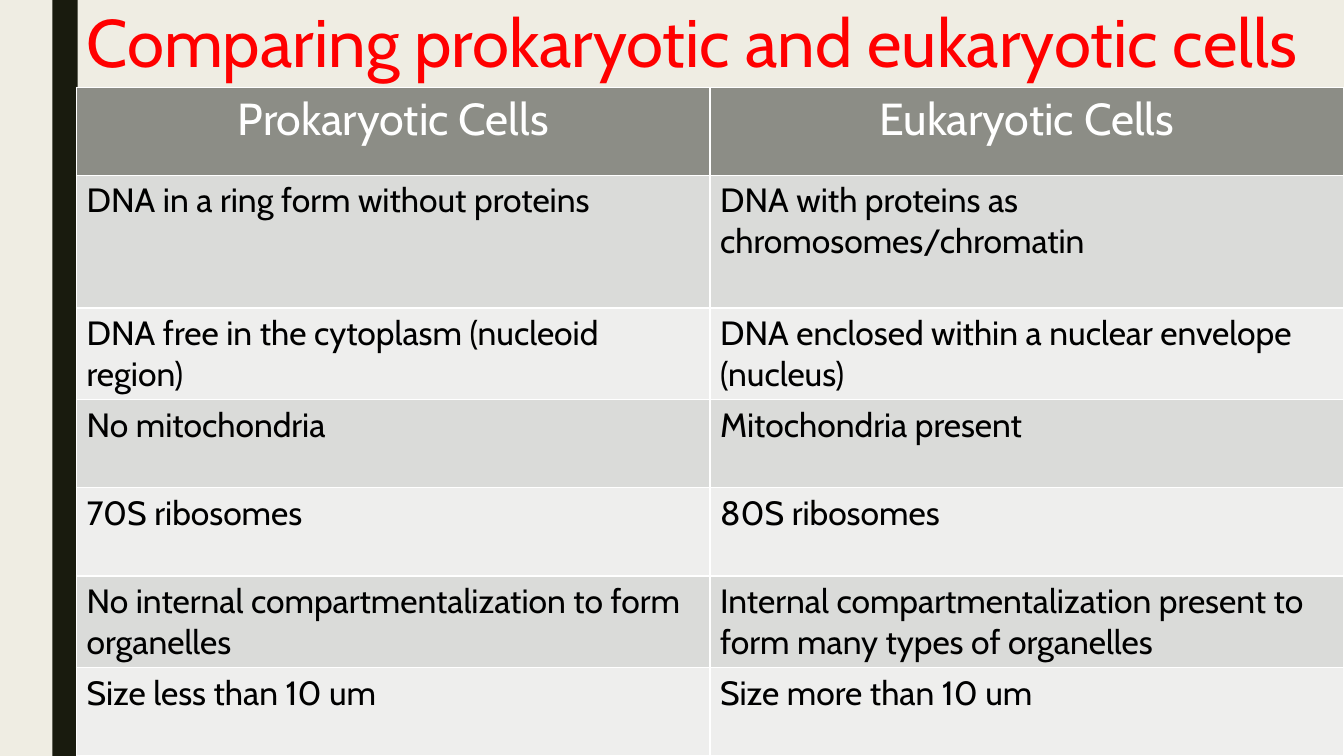
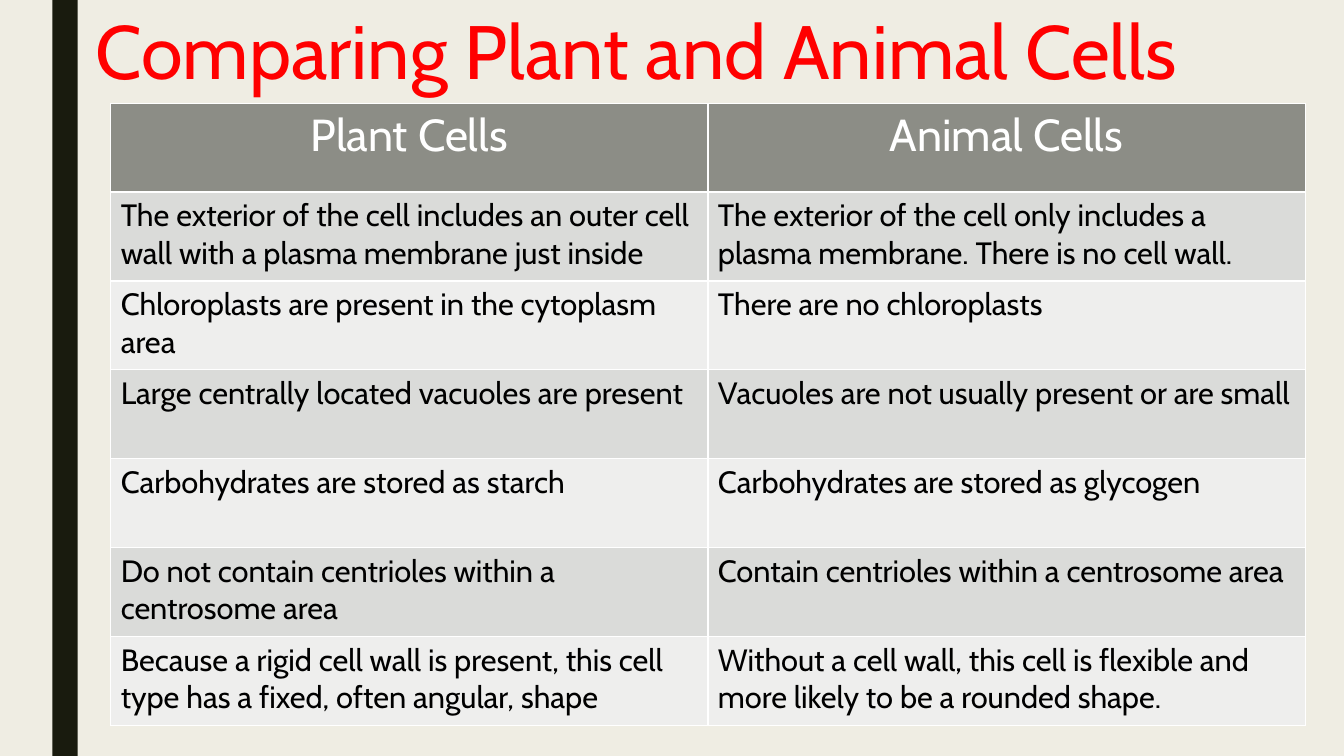
from lxml.etree import SubElement
from pptx import Presentation
from pptx.dml.color import RGBColor
from pptx.enum.shapes import MSO_SHAPE
from pptx.enum.text import MSO_ANCHOR, MSO_AUTO_SIZE, PP_ALIGN
from pptx.oxml.ns import qn
from pptx.util import Cm, Pt

# Shared look
FONT = "Cabin"
BACKGROUND, BAND = "EFEDE3", "191B0E"
HEADER_FILL, ROW_FILLS = "8C8D86", ("DADBD9", "EEEEED")
BORDER = "FFFFFF"
SLIDE_WIDTH, SLIDE_HEIGHT = 33.87, 19.05
BAND_LEFT, BAND_WIDTH = 1.32, 0.64
TITLE_ONLY = 5

# Content: boxes are left, top, width, height in cm
SLIDES = [
    {
        "title": "Comparing prokaryotic and eukaryotic cells",
        "title_size": 48,
        "title_box": (1.93, 0.13, 31.93, 4.11),
        "table_at": (1.93, 2.2),
        "table_width": 31.93,
        "row_heights": (2.22, 3.34, 2.31, 2.22, 2.22, 2.31, 2.22),
        "text_size": 24,
        "rows": [
            ("Prokaryotic Cells", "Eukaryotic Cells"),
            ("DNA in a ring form without proteins",
             "DNA with proteins as chromosomes/chromatin"),
            ("DNA free in the cytoplasm (nucleoid region)",
             "DNA enclosed within a nuclear envelope (nucleus)"),
            ("No mitochondria", "Mitochondria present"),
            ("70S ribosomes", "80S ribosomes"),
            ("No internal compartmentalization to form organelles",
             "Internal compartmentalization present to form many types of organelles"),
            ("Size less than 10 um", "Size more than 10 um"),
        ],
    },
    {
        "title": "Comparing Plant and Animal Cells",
        "title_size": 54,
        "title_box": (2.16, 0.25, 30.73, 2.08),
        "table_at": (2.79, 2.6),
        "table_width": 30.1,
        "row_heights": (2.24,) * 7,
        "text_size": 22,
        "rows": [
            ("Plant Cells", "Animal Cells"),
            ("The exterior of the cell includes an outer cell wall with a plasma membrane just inside",
             "The exterior of the cell only includes a plasma membrane. There is no cell wall."),
            ("Chloroplasts are present in the cytoplasm area",
             "There are no chloroplasts"),
            ("Large centrally located vacuoles are present",
             "Vacuoles are not usually present or are small"),
            ("Carbohydrates are stored as starch",
             "Carbohydrates are stored as glycogen"),
            ("Do not contain centrioles within a centrosome area",
             "Contain centrioles within a centrosome area"),
            ("Because a rigid cell wall is present, this cell type has a fixed, often angular, shape",
             "Without a cell wall, this cell is flexible and more likely to be a rounded shape."),
        ],
    },
]


def set_all(target, values):
    for name, value in values.items():
        setattr(target, name, value)


def paint(fill, color):
    fill.solid()
    fill.fore_color.rgb = RGBColor.from_string(color)


def write(text_frame, text, size, color, align=PP_ALIGN.LEFT, **paragraph_format):
    paragraph = text_frame.paragraphs[0]
    set_all(paragraph, {"alignment": align, **paragraph_format})
    run = paragraph.add_run()
    run.text = text
    set_all(run.font, {"name": FONT, "size": Pt(size), "bold": False})
    run.font.color.rgb = RGBColor.from_string(color)


def add_borders(cell):
    properties = cell._tc.get_or_add_tcPr()
    for side in ("a:lnL", "a:lnR", "a:lnT", "a:lnB"):
        line = SubElement(properties, qn(side), w=str(Pt(1)))
        fill = SubElement(line, qn("a:solidFill"))
        SubElement(fill, qn("a:srgbClr"), val=BORDER)


def set_master(presentation, slide):
    """Give the master its background and side band, drawn first on a slide."""
    master = presentation.slide_master
    paint(master.background.fill, BACKGROUND)
    band = slide.shapes.add_shape(MSO_SHAPE.RECTANGLE, Cm(BAND_LEFT), 0,
                                  Cm(BAND_WIDTH), Cm(SLIDE_HEIGHT))
    band.shadow.inherit = False
    paint(band.fill, BAND)
    band.line.fill.background()
    master.shapes.element.insert(2, band.element)


def add_title(slide, content):
    title = slide.shapes.title
    box = map(Cm, content["title_box"])
    set_all(title, dict(zip(("left", "top", "width", "height"), box)))
    set_all(title.text_frame, {"vertical_anchor": MSO_ANCHOR.TOP, "word_wrap": True,
                               "auto_size": MSO_AUTO_SIZE.NONE})
    write(title.text_frame, content["title"], content["title_size"], "FF0000",
          line_spacing=0.89)


def add_comparison(slide, content):
    rows, heights = content["rows"], content["row_heights"]
    left, top = map(Cm, content["table_at"])
    table = slide.shapes.add_table(len(rows), len(rows[0]), left, top,
                                   Cm(content["table_width"]), Cm(sum(heights))).table
    for row_index, (texts, height) in enumerate(zip(rows, heights)):
        table.rows[row_index].height = Cm(height)
        if row_index == 0:
            fill, style = HEADER_FILL, (32, "FFFFFF", PP_ALIGN.CENTER)
        else:
            fill = ROW_FILLS[(row_index - 1) % 2]
            style = (content["text_size"], "000000")
        for column_index, text in enumerate(texts):
            cell = table.cell(row_index, column_index)
            add_borders(cell)
            paint(cell.fill, fill)
            write(cell.text_frame, text, *style)


def main():
    presentation = Presentation()
    set_all(presentation, {"slide_width": Cm(SLIDE_WIDTH),
                           "slide_height": Cm(SLIDE_HEIGHT)})
    for index, content in enumerate(SLIDES):
        slide = presentation.slides.add_slide(presentation.slide_layouts[TITLE_ONLY])
        if index == 0:
            set_master(presentation, slide)
        add_title(slide, content)
        add_comparison(slide, content)
    presentation.save("out.pptx")


if __name__ == "__main__":
    main()
